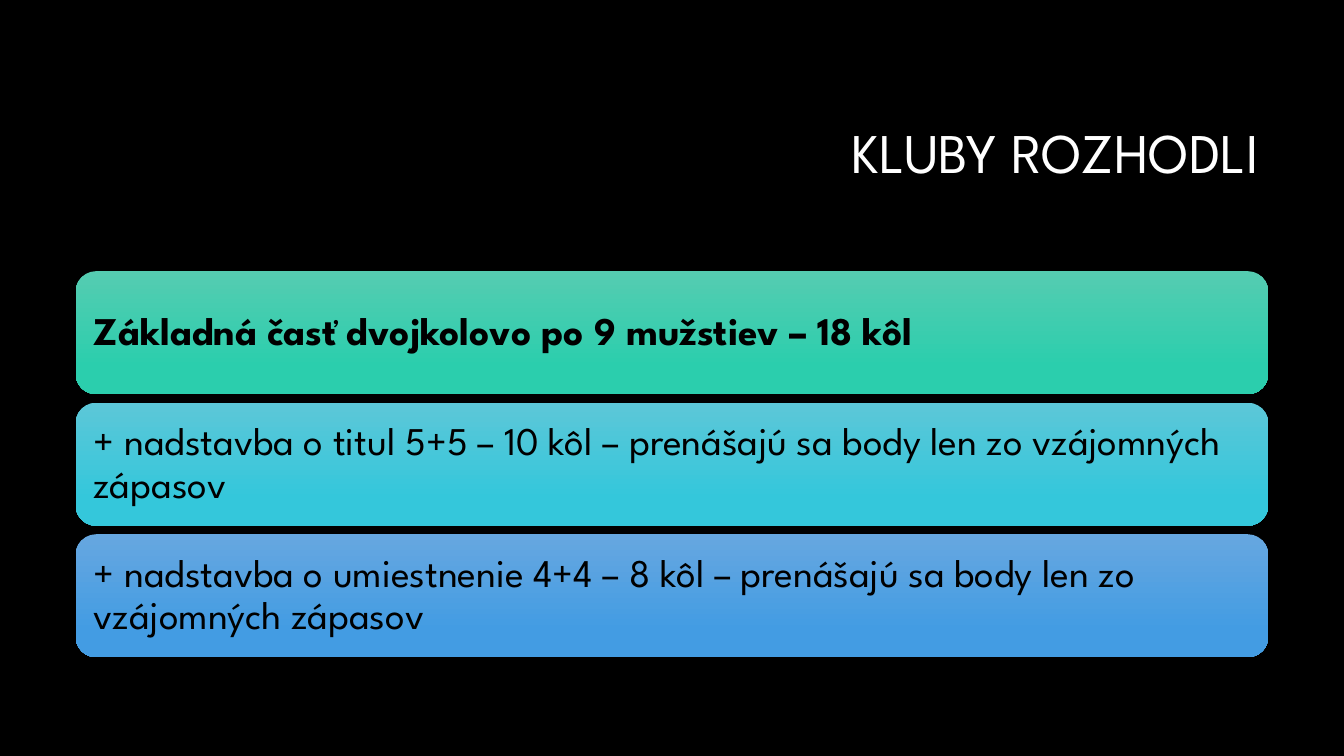
from pptx import Presentation
from pptx.dml.color import RGBColor
from pptx.enum.shapes import MSO_SHAPE
from pptx.enum.text import MSO_ANCHOR, MSO_AUTO_SIZE, PP_ALIGN
from pptx.util import Inches, Pt

ROUNDED = MSO_SHAPE.ROUNDED_RECTANGLE
MIDDLE = MSO_ANCHOR.MIDDLE
NO_AUTOFIT = MSO_AUTO_SIZE.NONE
LEFT, RIGHT = PP_ALIGN.LEFT, PP_ALIGN.RIGHT

FONT = "League Spartan"
COLORS = {
    "black": "000000",
    "white": "FFFFFF",
    "green_top": "55CCB1",
    "green": "2BCEAD",
    "cyan_top": "5CC7D8",
    "cyan": "34C7DB",
    "blue_top": "66A7E0",
    "blue": "439CE3",
}
RULES = [
    ("Základná časť dvojkolovo po 9 mužstiev – 18 kôl", "green", True),
    ("+ nadstavba o titul 5+5 – 10 kôl – prenášajú sa body len zo vzájomných zápasov", "cyan", False),
    ("+ nadstavba o umiestnenie 4+4 – 8 kôl – prenášajú sa body len zo vzájomných zápasov", "blue", False),
]
FIRST_TOP, LAST_TOP = 2.69, 5.3


def color(name):
    return RGBColor.from_string(COLORS[name])


def write_text(shape, text, size, color_name, align, bold=False):
    frame = shape.text_frame
    frame.word_wrap = True
    frame.auto_size = NO_AUTOFIT
    frame.vertical_anchor = MIDDLE
    para = frame.paragraphs[0]
    para.alignment = align
    para.line_spacing = 0.9
    span = para.add_run()
    span.text = text
    span.font.name = FONT
    span.font.size = Pt(size)
    span.font.bold = bold
    span.font.color.rgb = color(color_name)


def add_title(page, text):
    title = page.shapes.title
    title.left, title.top = Inches(3.17), Inches(0.84)
    title.width, title.height = Inches(9.42), Inches(1.41)
    write_text(title, text, size=40, color_name="white", align=RIGHT)


def add_rule_card(page, top, text, color_name, bold):
    card = page.shapes.add_shape(
        ROUNDED, Inches(0.75), Inches(top), Inches(11.83), Inches(1.22))
    card.shadow.inherit = False
    card.line.fill.background()
    card.fill.gradient()
    card.fill.gradient_angle = 270
    start, end = card.fill.gradient_stops
    start.position, end.position = 0, 0.78
    start.color.rgb = color(color_name + "_top")
    end.color.rgb = color(color_name)
    frame = card.text_frame
    frame.margin_left = frame.margin_right = Inches(0.12)
    frame.margin_top = frame.margin_bottom = Inches(0.12)
    write_text(card, text, size=28, color_name="black", align=LEFT, bold=bold)


def main():
    deck = Presentation()
    deck.slide_width, deck.slide_height = Inches(13.33), Inches(7.5)
    page = deck.slides.add_slide(deck.slide_layouts[5])
    page.background.fill.solid()
    page.background.fill.fore_color.rgb = color("black")
    add_title(page, "KLUBY ROZHODLI")
    pitch = (LAST_TOP - FIRST_TOP) / (len(RULES) - 1)
    for index, (text, color_name, bold) in enumerate(RULES):
        add_rule_card(page, FIRST_TOP + index * pitch, text, color_name, bold)
    deck.save("out.pptx")


if __name__ == "__main__":
    main()
